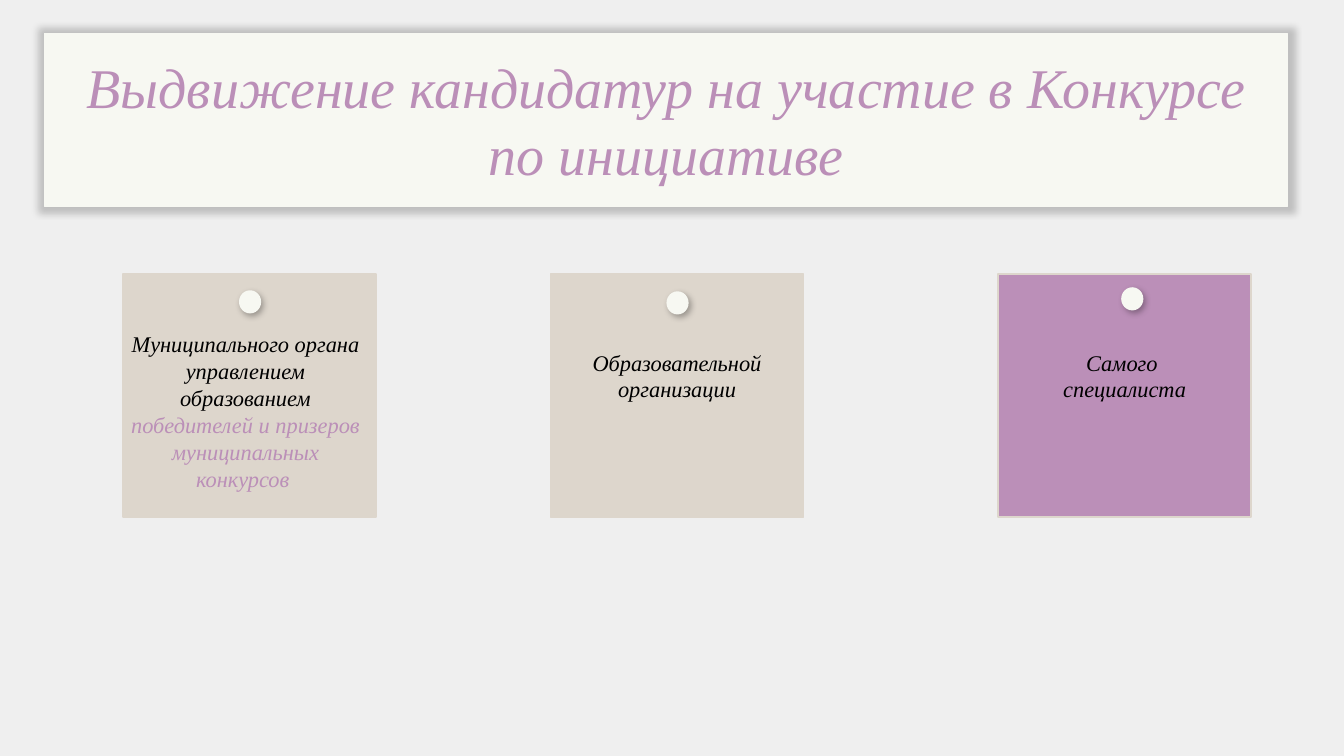
from pptx import Presentation
from pptx.dml.color import RGBColor
from pptx.enum.shapes import MSO_SHAPE
from pptx.enum.text import MSO_ANCHOR, PP_ALIGN
from pptx.oxml import parse_xml
from pptx.oxml.ns import nsdecls
from pptx.util import Inches, Pt

RECT, OVAL = MSO_SHAPE.RECTANGLE, MSO_SHAPE.OVAL
MIDDLE, CENTER = MSO_ANCHOR.MIDDLE, PP_ALIGN.CENTER
PAPER, SAND, LILAC, BLACK = "F7F8F2", "DDD6CC", "BB8FB8", "000000"


def paint(shape, fill, line=None, shadow=None):
    shape.fill.solid()
    shape.fill.fore_color.rgb = RGBColor.from_string(fill)
    if line:
        shape.line.color.rgb = RGBColor.from_string(line)
        shape.line.width = Pt(1)
    else:
        shape.line.fill.background()
    shape.shadow.inherit = False
    if shadow:
        attrs, alpha = shadow
        glow = parse_xml(
            f'<a:outerShdw {nsdecls("a")} {attrs} rotWithShape="0">'
            f'<a:srgbClr val="{BLACK}"><a:alpha val="{alpha * 1000}"/></a:srgbClr>'
            '</a:outerShdw>')
        shape._element.spPr.find(".//{*}effectLst").append(glow)


def write(shape, parts, size):
    frame = shape.text_frame
    frame.word_wrap = True
    frame.text = "\n".join(text for text, color in parts)
    for para, (text, color) in zip(frame.paragraphs, parts):
        para.alignment = CENTER
        font = para.runs[0].font
        font.name, font.size, font.italic = "Times New Roman", Pt(size), True
        font.color.rgb = RGBColor.from_string(color)


deck = Presentation()
deck.slide_width, deck.slide_height = Inches(13.33), Inches(7.5)
slide = deck.slides.add_slide(deck.slide_layouts[6])
slide.background.fill.solid()
slide.background.fill.fore_color.rgb = RGBColor.from_string("EFEFEF")

# Title panel with a soft grey rim
halo = (f'blurRad="{Pt(5)}" sx="101000" sy="106000" algn="ctr"', 20)
title = slide.shapes.add_shape(RECT, Inches(0.44), Inches(0.33), Inches(12.33), Inches(1.72))
paint(title, PAPER, PAPER, halo)
title.text_frame.vertical_anchor = MIDDLE
write(title, [("Выдвижение кандидатур на участие в Конкурсе по инициативе", LILAC)], 40)

# Pinned notes: left, fill, pin place, text box, paragraphs
notes = [
    (1.22, SAND, (2.37, 2.88), (1.15, 3.23, 2.57, 1.72),
     [("Муниципального органа управлением образованием", BLACK),
      ("победителей и призеров муниципальных конкурсов ", LILAC)]),
    (5.46, SAND, (6.61, 2.89), (5.35, 3.41, 2.73, 0.64),
     [("Образовательной организации", BLACK)]),
    (9.9, LILAC, (11.12, 2.85), (9.87, 3.41, 2.57, 0.64),
     [("Самого ", BLACK), ("специалиста", BLACK)]),
]
drop = (f'blurRad="{Pt(4.5)}" dist="{Pt(2.6)}" dir="{53 * 60000}" algn="ctr"', 30)
for left, fill, (x, y), box, parts in notes:
    group = slide.shapes.add_group_shape().shapes
    card = group.add_shape(RECT, Inches(left), Inches(2.72), Inches(2.51), Inches(2.41))
    paint(card, fill, SAND)
    pin = group.add_shape(OVAL, Inches(x), Inches(y), Inches(0.22), Inches(0.23))
    paint(pin, PAPER, shadow=drop)
    write(group.add_textbox(*map(Inches, box)), parts, 16)

deck.save("out.pptx")
